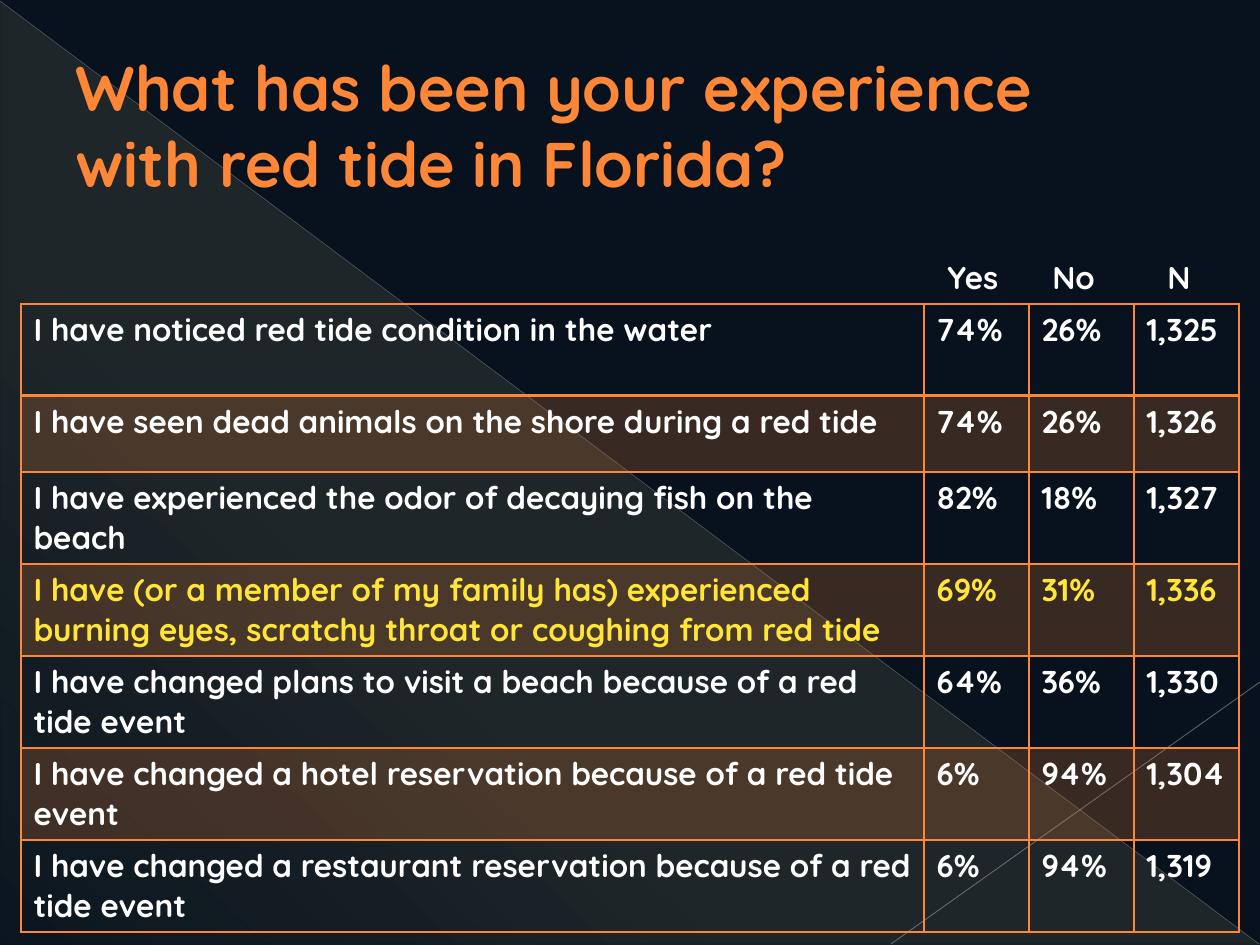
from lxml import etree
from pptx import Presentation
from pptx.dml.color import RGBColor
from pptx.enum.shapes import MSO_CONNECTOR, MSO_SHAPE
from pptx.enum.text import MSO_ANCHOR, PP_ALIGN
from pptx.oxml import parse_xml
from pptx.oxml.ns import nsdecls, qn
from pptx.util import Emu, Pt

TITLE = "What has been your experience with red tide in Florida?"
HEADINGS = [("Yes", 935, 94), ("No", 1040, 73), ("N", 1155, 63)]  # text, left, width
ANSWERS = [
    ("I have noticed red tide condition in the water", "74%", "26%", "1,325"),
    ("I have seen dead animals on the shore during a red tide", "74%", "26%", "1,326"),
    ("I have experienced the odor of decaying fish on the beach", "82%", "18%", "1,327"),
    ("I have (or a member of my family has) experienced burning eyes, "
     "scratchy throat or coughing from red tide", "69%", "31%", "1,336"),
    ("I have changed plans to visit a beach because of a red tide event", "64%", "36%", "1,330"),
    ("I have changed a hotel reservation because of a red tide event", "6%", "94%", "1,304"),
    ("I have changed a restaurant reservation because of a red tide event", "6%", "94%", "1,319"),
]
HIGHLIGHTED_ROW = 3
COLUMN_WIDTHS = [903, 105, 105, 105]
ROW_HEIGHTS = [92, 76, 92, 92, 92, 92, 92]

NAVY = RGBColor(0x08, 0x12, 0x1E)
ORANGE = RGBColor(0xFE, 0x86, 0x37)
YELLOW = RGBColor(0xFF, 0xE6, 0x36)
PALE_YELLOW = RGBColor(0xFF, 0xF3, 0x9D)
WHITE = RGBColor(0xFF, 0xFF, 0xFF)
GRAY = RGBColor(0xBA, 0xBD, 0xC4)
LIGHT_GRAY = RGBColor(0xC1, 0xC4, 0xCA)

# start, end, colour, width in points, opacity in percent
BACKDROP_LINES = [((0, 1), (1259, 944), GRAY, 0.39, 35),
                  ((1260, 682), (891, 944), LIGHT_GRAY, 0.47, 45)]
GRADIENT_STOPS = [(0, 10), (70, 8), (100, 1)]  # position, opacity in percent
GRADIENT_ANGLE = 133


def px(*lengths):
    return [Emu(round(length * 914400 / 126)) for length in lengths]


def set_opacity(fill, percent):
    color = fill._xPr.find(qn("a:solidFill"))[0]
    etree.SubElement(color, qn("a:alpha"), val=str(percent * 1000))


def write(text_frame, text, color, size=18):
    paragraph = text_frame.paragraphs[0]
    paragraph.alignment = PP_ALIGN.LEFT
    run = paragraph.add_run()
    run.text = text
    run.font.color.rgb = color
    for name, value in {"name": "Quicksand", "size": Pt(size), "bold": True}.items():
        setattr(run.font, name, value)


def add_backdrop(slide):
    triangle = slide.shapes.add_shape(MSO_SHAPE.RIGHT_TRIANGLE, *px(1, 2, 1258, 942))
    triangle.shadow.inherit = False
    triangle.line.fill.background()
    stops = "".join(
        f'<a:gs pos="{position * 1000}"><a:srgbClr val="{PALE_YELLOW}">'
        f'<a:alpha val="{opacity * 1000}"/></a:srgbClr></a:gs>'
        for position, opacity in GRADIENT_STOPS)
    gradient = parse_xml(
        f'<a:gradFill {nsdecls("a")}><a:gsLst>{stops}</a:gsLst>'
        f'<a:lin ang="{GRADIENT_ANGLE * 60000}" scaled="0"/></a:gradFill>')
    triangle._element.spPr.find(qn("a:prstGeom")).addnext(gradient)

    for start, end, color, width, opacity in BACKDROP_LINES:
        connector = slide.shapes.add_connector(MSO_CONNECTOR.STRAIGHT, *px(*start, *end))
        connector.line.color.rgb = color
        connector.line.width = Pt(width)
        set_opacity(connector.line.fill, opacity)
        etree.SubElement(connector._element.spPr, qn("a:effectLst"))


def set_borders(cell, bottom_width):
    properties = cell._tc.get_or_add_tcPr()
    widths = {"lnL": 1, "lnR": 1, "lnT": 1, "lnB": bottom_width}
    for index, (side, width) in enumerate(widths.items()):
        properties.insert(index, parse_xml(
            f'<a:{side} {nsdecls("a")} w="{Pt(width)}"><a:solidFill>'
            f'<a:srgbClr val="{ORANGE}"/></a:solidFill></a:{side}>'))


def add_answer_table(slide):
    table = slide.shapes.add_table(
        len(ANSWERS), len(COLUMN_WIDTHS),
        *px(21, 304, sum(COLUMN_WIDTHS), sum(ROW_HEIGHTS))).table
    table.first_row = table.horz_banding = False
    for column, width in zip(table.columns, px(*COLUMN_WIDTHS)):
        column.width = width
    for row, height in zip(table.rows, px(*ROW_HEIGHTS)):
        row.height = height
    for row_index, answer in enumerate(ANSWERS):
        color = YELLOW if row_index == HIGHLIGHTED_ROW else WHITE
        for column_index, text in enumerate(answer):
            cell = table.cell(row_index, column_index)
            write(cell.text_frame, text, color)
            if row_index % 2:
                cell.fill.solid()
                cell.fill.fore_color.rgb = ORANGE
                set_opacity(cell.fill, 20)
            else:
                cell.fill.background()
            set_borders(cell, bottom_width=2 if row_index == 0 else 1)


def add_headings(slide):
    for text, left, width in HEADINGS:
        box = slide.shapes.add_textbox(*px(left, 252, width, 50))
        box.text_frame.word_wrap = True
        write(box.text_frame, text, WHITE)


def place_title(slide):
    title = slide.shapes.title
    title.left, title.top, title.width, title.height = px(63, 42, 1113, 165)
    title.text_frame.word_wrap = True
    title.text_frame.vertical_anchor = MSO_ANCHOR.MIDDLE
    write(title.text_frame, TITLE, ORANGE, size=36)
    slide.shapes._spTree.append(title._element)  # in front of the backdrop


def main():
    presentation = Presentation()
    presentation.slide_width, presentation.slide_height = px(1260, 945)
    slide = presentation.slides.add_slide(presentation.slide_layouts[5])
    slide.background.fill.solid()
    slide.background.fill.fore_color.rgb = NAVY
    add_backdrop(slide)
    add_answer_table(slide)
    add_headings(slide)
    place_title(slide)
    presentation.save("out.pptx")


if __name__ == "__main__":
    main()
